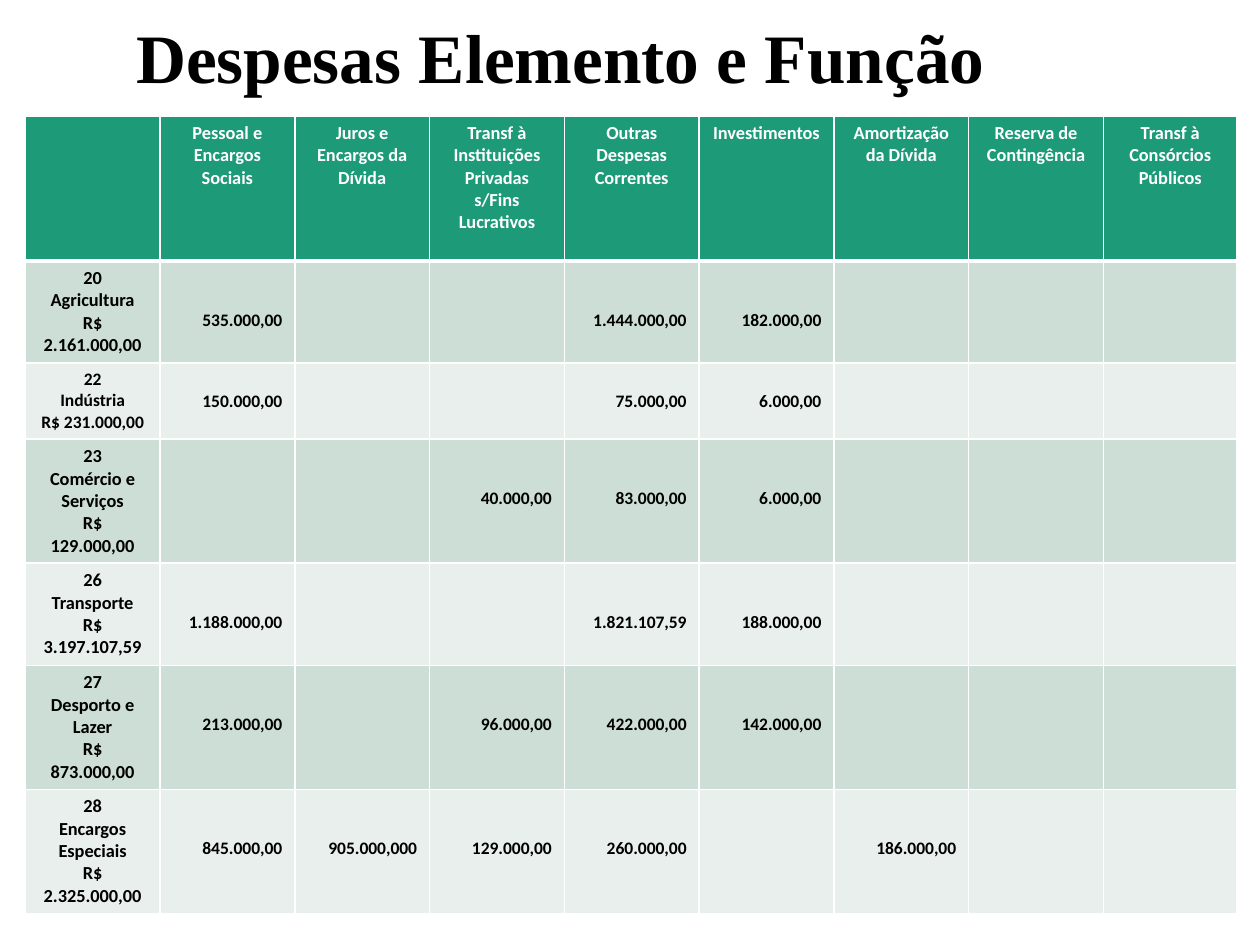
import pptx
import pptx.dml.color
import pptx.enum.text
import pptx.oxml
import pptx.oxml.ns
import pptx.util

Inches = pptx.util.Inches
ALIGN = pptx.enum.text.PP_ALIGN
ANCHOR = pptx.enum.text.MSO_ANCHOR

WHITE, BLACK, GREEN = "FFFFFF", "000000", "1D9A78"
BANDS = ["CDDED6", "E8EFEC"]

HEADERS = ["", "Pessoal e Encargos Sociais", "Juros e Encargos da Dívida",
           "Transf à Instituições Privadas s/Fins Lucrativos",
           "Outras Despesas Correntes", "Investimentos",
           "Amortização da Dívida", "Reserva de Contingência",
           "Transf à Consórcios Públicos"]
COLUMN_WIDTHS = [1.07] * 8 + [1.06]
HEADER_HEIGHT = 1.15

# Each row: height, label size, top margin of the values, label, values by column
ROWS = [
    (0.81, 10.5, 0.39, "20\nAgricultura\nR$ 2.161.000,00",
     {1: "535.000,00", 4: "1.444.000,00", 5: "182.000,00"}),
    (0.6, 10, 0.22, "22\nIndústria\nR$ 231.000,00",
     {1: "150.000,00", 4: "75.000,00", 5: "6.000,00"}),
    (0.98, 10.5, 0.39, "23\nComércio e Serviços\nR$\n129.000,00",
     {3: "40.000,00", 4: "83.000,00", 5: "6.000,00"}),
    (0.81, 10.5, 0.39, "26\nTransporte\nR$\n3.197.107,59",
     {1: "1.188.000,00", 4: "1.821.107,59", 5: "188.000,00"}),
    (0.98, 10.5, 0.39, "27\nDesporto e Lazer\nR$\n873.000,00",
     {1: "213.000,00", 3: "96.000,00", 4: "422.000,00", 5: "142.000,00"}),
    (0.98, 10.5, 0.39, "28\nEncargos Especiais\nR$\n2.325.000,00",
     {1: "845.000,00", 2: "905.000,000", 3: "129.000,00", 4: "260.000,00",
      6: "186.000,00"}),
]


def color(value):
    return pptx.dml.color.RGBColor.from_string(value)


def set_attributes(target, values):
    for name, value in values.items():
        setattr(target, name, value)


def format_font(font, name, size, font_color):
    set_attributes(font, {"name": name, "size": pptx.util.Pt(size), "bold": True})
    font.color.rgb = color(font_color)


def set_borders(cell, top=1, bottom=1):
    """Draw white borders; top and bottom are widths in points."""
    properties = cell._tc.get_or_add_tcPr()
    for side, width in {"L": 1, "R": 1, "T": top, "B": bottom}.items():
        properties.append(pptx.oxml.parse_xml(
            f'<a:ln{side} {pptx.oxml.ns.nsdecls("a")} w="{pptx.util.Pt(width)}">'
            f'<a:solidFill><a:srgbClr val="{WHITE}"/></a:solidFill></a:ln{side}>'))


def fill_cell(cell, text, fill, size=10.5, font_color=BLACK,
              alignment=ALIGN.CENTER, margin_top=0.05):
    cell.fill.solid()
    cell.fill.fore_color.rgb = color(fill)
    if not text:
        return
    cell.margin_top = Inches(margin_top)
    cell.text = text
    for paragraph in cell.text_frame.paragraphs:
        paragraph.alignment = alignment
        for run in paragraph.runs:
            format_font(run.font, "Calibri", size, font_color)


def add_title(slide, text):
    title = slide.shapes.title
    set_attributes(title, {"left": Inches(0.98), "top": Inches(0.21),
                           "width": Inches(8.62), "height": Inches(0.55)})
    frame = title.text_frame
    frame.text = text
    set_attributes(frame, {"vertical_anchor": ANCHOR.MIDDLE, "word_wrap": True,
                           "auto_size": pptx.enum.text.MSO_AUTO_SIZE.NONE})
    paragraph = frame.paragraphs[0]
    set_attributes(paragraph, {"alignment": ALIGN.LEFT, "line_spacing": 0.9})
    format_font(paragraph.runs[0].font, "Times New Roman", 39.6, BLACK)


def add_expense_table(slide):
    heights = [HEADER_HEIGHT] + [row[0] for row in ROWS]
    table = slide.shapes.add_table(
        len(heights), len(HEADERS), Inches(0.2), Inches(0.92),
        Inches(sum(COLUMN_WIDTHS)), Inches(sum(heights))).table
    for column, width in zip(table.columns, COLUMN_WIDTHS):
        column.width = Inches(width)
    for row, height in zip(table.rows, heights):
        row.height = Inches(height)

    for column, header in enumerate(HEADERS):
        cell = table.cell(0, column)
        set_borders(cell, bottom=3)
        fill_cell(cell, header, GREEN, font_color=WHITE)

    for index, (_, label_size, margin_top, label, values) in enumerate(ROWS):
        band = BANDS[index % 2]
        for column in range(len(HEADERS)):
            cell = table.cell(index + 1, column)
            set_borders(cell, top=3 if index == 0 else 1)
            if column == 0:
                fill_cell(cell, label, band, label_size)
            else:
                fill_cell(cell, values.get(column), band, 10,
                          alignment=ALIGN.RIGHT, margin_top=margin_top)


def main():
    presentation = pptx.Presentation()
    set_attributes(presentation, {"slide_width": Inches(10),
                                  "slide_height": Inches(7.5)})
    slide = presentation.slides.add_slide(presentation.slide_layouts[5])
    add_title(slide, "Despesas Elemento e Função")
    add_expense_table(slide)
    presentation.save("out.pptx")


if __name__ == "__main__":
    main()
